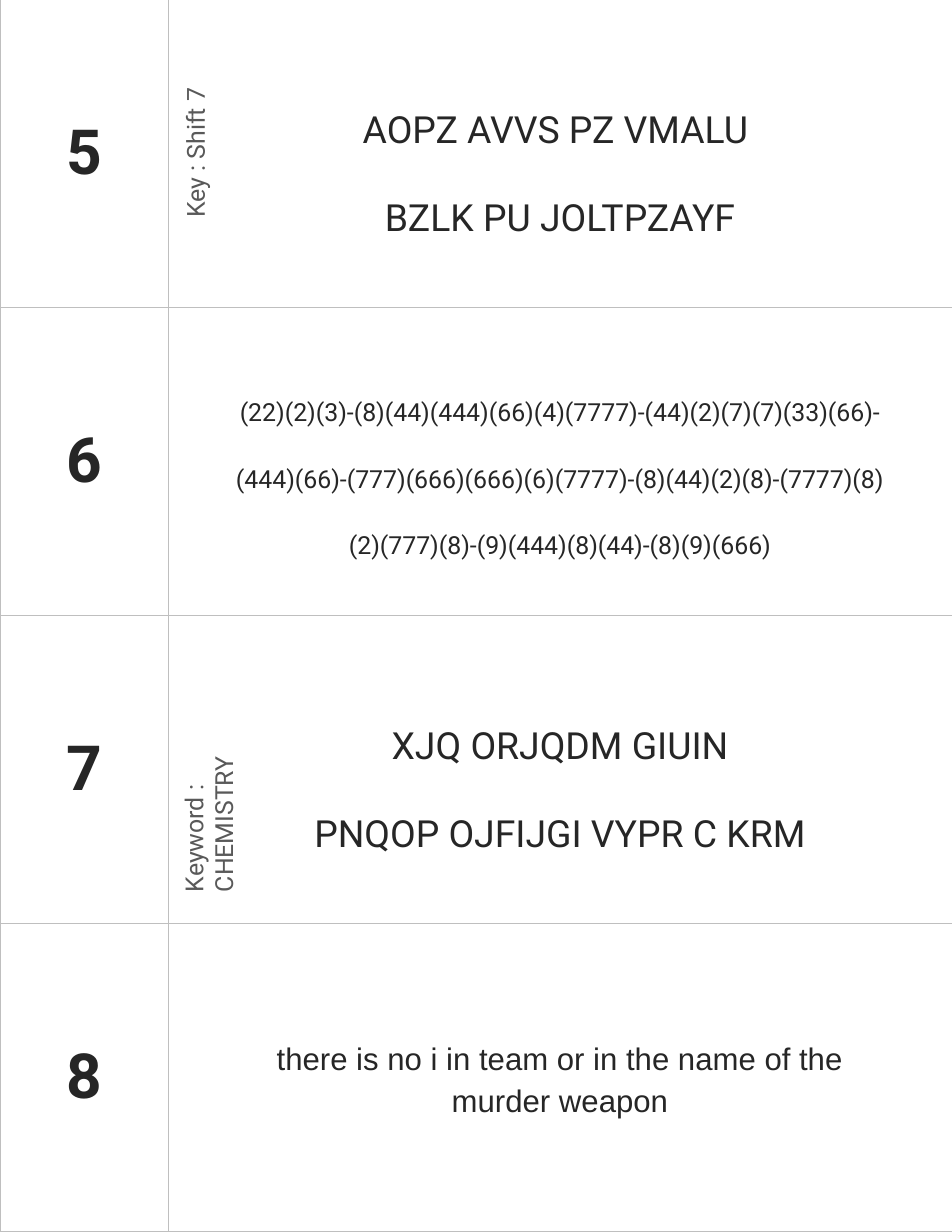
from lxml import etree
from pptx import Presentation
from pptx.dml.color import RGBColor
from pptx.enum.text import MSO_ANCHOR, MSO_AUTO_SIZE, PP_ALIGN
from pptx.oxml.ns import qn
from pptx.util import Emu, Pt

PX = 914400 / 112
INK = RGBColor(0x26, 0x26, 0x26)
GREY = RGBColor(0x59, 0x59, 0x59)
RULE = RGBColor(0xBF, 0xBF, 0xBF)
WIDTH, HEIGHT = 952, 1232
NUMBER_WIDTH, ROW_HEIGHT = 168, 308
SIDE_INSET, NUMBER_INSET = 56, 22

CLUES = [
    ("5", ["AOPZ AVVS PZ VMALU ", "BZLK PU JOLTPZAYF"],
     56, {"size": 24, "spacing": 2}),
    ("6", ["(22)(2)(3)-(8)(44)(444)(66)(4)(7777)-(44)(2)(7)(7)(33)(66)-"
           "(444)(66)-(777)(666)(666)(6)(7777)-(8)(44)(2)(8)-(7777)(8)"
           "(2)(777)(8)-(9)(444)(8)(44)-(8)(9)(666)"],
     45, {"size": 16, "spacing": 2.29}),
    ("7", ["XJQ ORJQDM GIUIN", "PNQOP OJFIJGI VYPR C KRM"],
     56, {"size": 24, "spacing": 2}),
    ("8", ["there is no i in team or in the name of the murder weapon"],
     34, {"size": 20, "spacing": 1.2, "font": "Arial"}),
]


def px(value):
    return Emu(round(value * PX))


def write_text(frame, lines, size=16, font="Roboto", color=INK, bold=False,
               align=PP_ALIGN.CENTER, spacing=1.0):
    for index, line in enumerate(lines):
        paragraph = frame.add_paragraph() if index else frame.paragraphs[0]
        paragraph.alignment = align
        paragraph.line_spacing = spacing
        run = paragraph.add_run()
        run.text = line
        run.font.name = font
        run.font.size = Pt(size)
        run.font.bold = bold
        run.font.color.rgb = color


def add_borders(cell):
    properties = cell._tc.get_or_add_tcPr()
    for position, side in enumerate(("a:lnL", "a:lnR", "a:lnT", "a:lnB")):
        line = etree.Element(qn(side), w=str(Pt(0.5)))
        fill = etree.SubElement(line, qn("a:solidFill"))
        etree.SubElement(fill, qn("a:srgbClr"), val=str(RULE))
        properties.insert(position, line)


def fill_cell(cell, lines, vertical_inset, **text_format):
    cell.fill.background()
    cell.vertical_anchor = MSO_ANCHOR.MIDDLE
    cell.margin_left = cell.margin_right = px(SIDE_INSET)
    cell.margin_top = cell.margin_bottom = px(vertical_inset)
    write_text(cell.text_frame, lines, **text_format)
    add_borders(cell)


def add_clue_table(slide, left, top, width, height):
    frame = slide.shapes.add_table(len(CLUES), 2, px(left), px(top),
                                   px(width), px(height))
    table = frame.table
    table.first_row = table.horz_banding = False
    table.columns[0].width = px(NUMBER_WIDTH)
    table.columns[1].width = px(width - NUMBER_WIDTH)
    for row, (number, lines, inset, text_format) in enumerate(CLUES):
        table.rows[row].height = px(height / len(CLUES))
        fill_cell(table.cell(row, 0), [number], NUMBER_INSET, size=40, bold=True)
        fill_cell(table.cell(row, 1), lines, inset, **text_format)


def add_key_label(slide, text, left, top, width, height, end_inset=0):
    shape = slide.shapes.add_textbox(px(left), px(top), px(width), px(height))
    shape.rotation = 270
    frame = shape.text_frame
    frame.word_wrap = True
    frame.auto_size = MSO_AUTO_SIZE.NONE
    frame.margin_right = px(end_inset)
    write_text(frame, [text], color=GREY, align=PP_ALIGN.LEFT)


def main():
    presentation = Presentation()
    presentation.slide_width = px(WIDTH)
    presentation.slide_height = px(HEIGHT)
    slide = presentation.slides.add_slide(presentation.slide_layouts[6])
    add_clue_table(slide, 0, -1, WIDTH, ROW_HEIGHT * len(CLUES))
    add_key_label(slide, "Keyword : CHEMISTRY", 59, 748, 269, 41, end_inset=22)
    add_key_label(slide, "Key : Shift 7", 119, 132, 152, 41)
    presentation.save("out.pptx")


if __name__ == "__main__":
    main()
